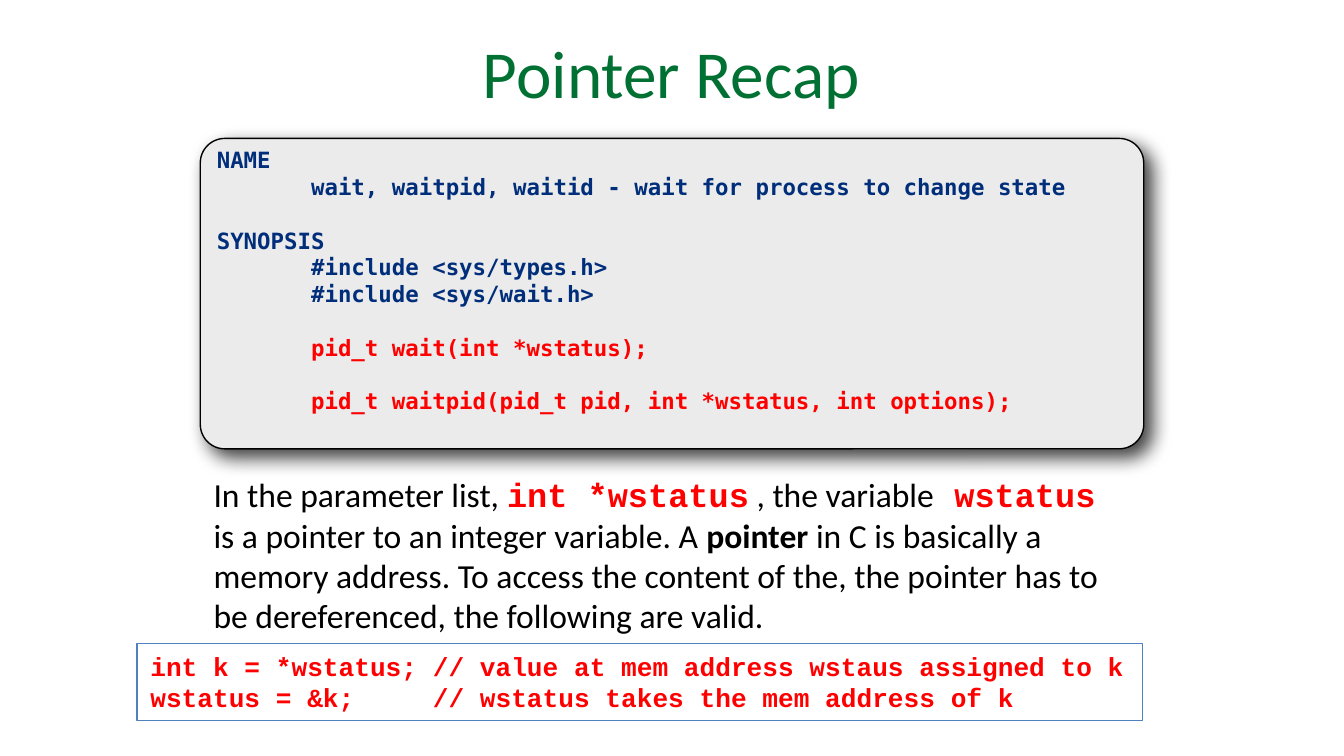
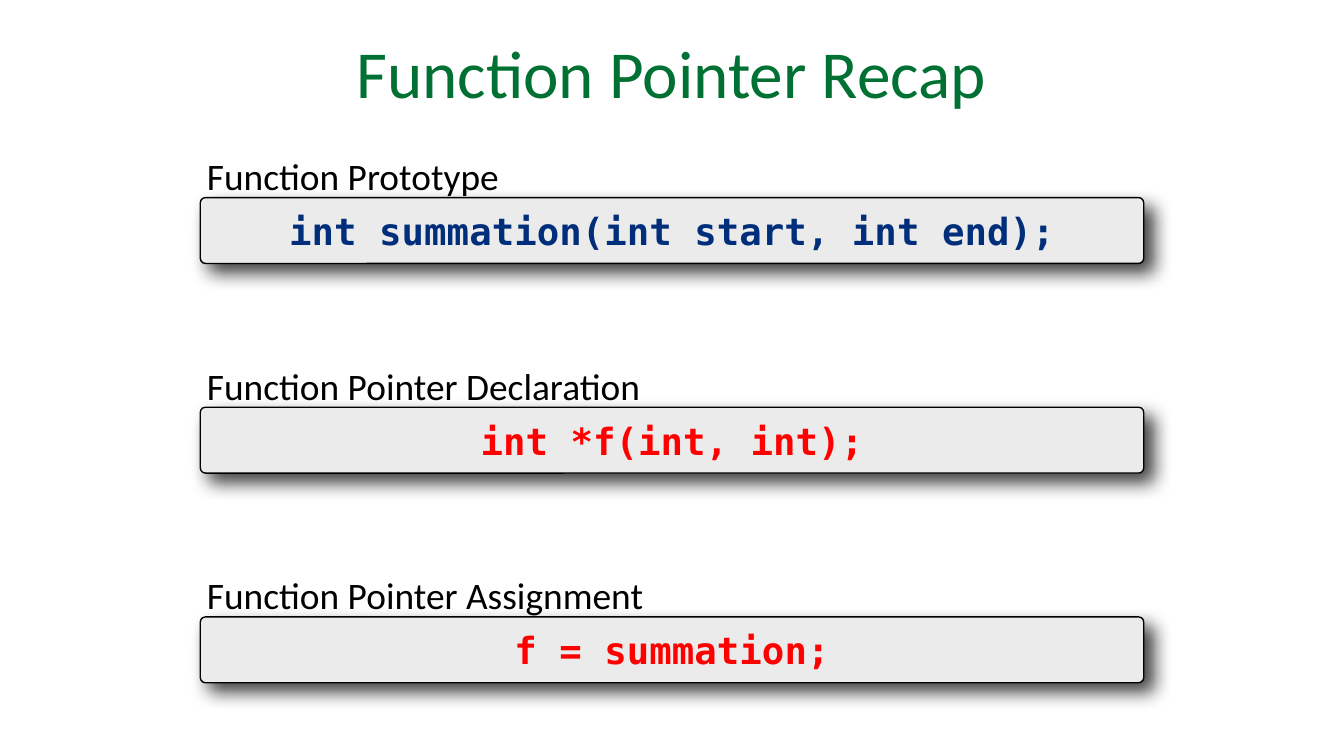
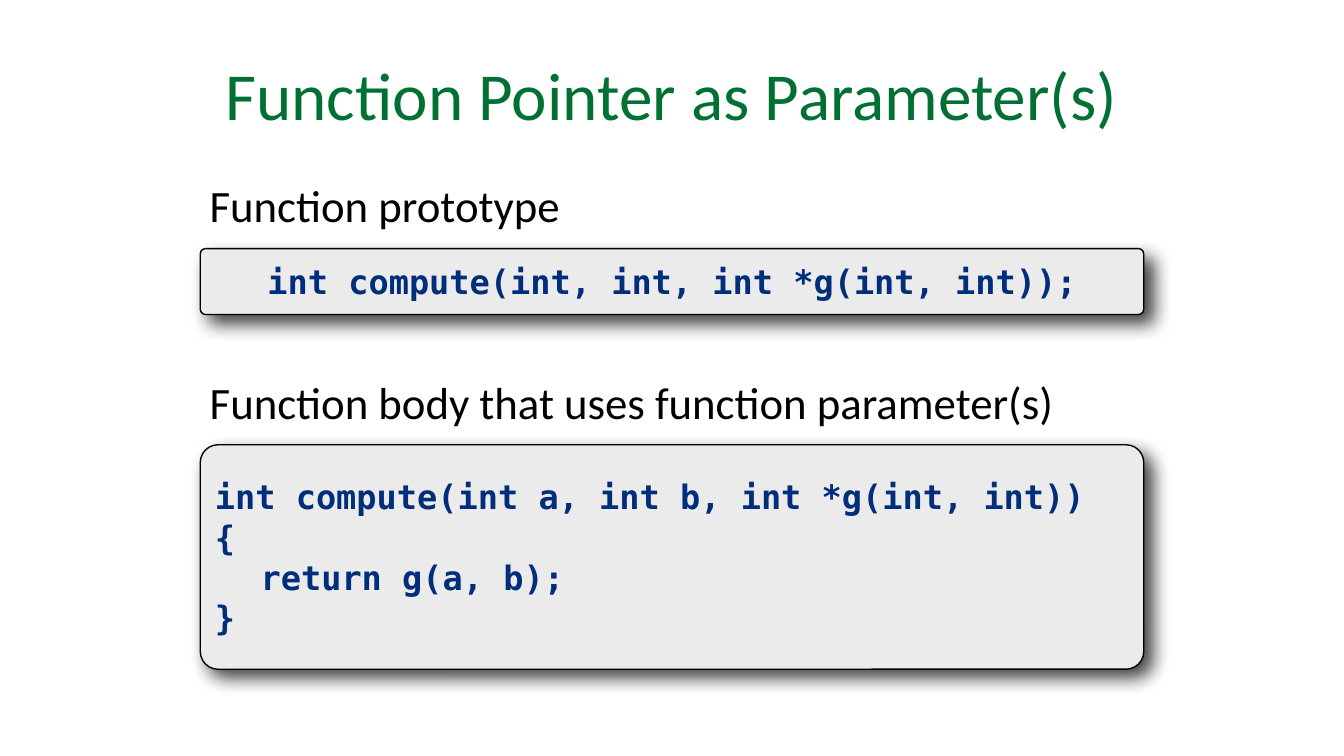
from pptx import Presentation
from pptx import util as u
from pptx.dml.color import RGBColor
from pptx.enum import shapes, text
from pptx.oxml import parse_xml

GREEN, NAVY, RED, BLACK = "007033", "002E7A", "FF0000", "000000"
PANEL_FILL, OUTLINE = "EBEBEB", "4F81BD"
BODY, MONO, COURIER = "Calibri", "DejaVu Sans Mono", "Courier New"
LEFT, WIDTH, ROW = 1.49, 7.02, 0.49
SHADOW = (
    '<a:effectLst xmlns:a="http://schemas.openxmlformats.org/drawingml/2006/main">'
    '<a:outerShdw blurRad="127000" dist="76200" dir="2700000" algn="tl" rotWithShape="0">'
    '<a:srgbClr val="000000"><a:alpha val="75000"/></a:srgbClr>'
    "</a:outerShdw></a:effectLst>"
)


def color(hex_string):
    return RGBColor.from_string(hex_string)


def write(shape, lines, size, font=BODY, ink=BLACK, bold=False, align="LEFT",
          anchor="TOP", inset=(0.1, 0.05, 0.1, 0.05), wrap=True, margin=0):
    frame = shape.text_frame
    frame.word_wrap = wrap
    frame.vertical_anchor = text.MSO_ANCHOR[anchor]
    frame.margin_left, frame.margin_top, frame.margin_right, frame.margin_bottom = map(u.Inches, inset)
    for number, line in enumerate(lines):
        paragraph = frame.paragraphs[0] if number == 0 else frame.add_paragraph()
        paragraph.alignment = text.PP_ALIGN[align]
        properties = paragraph._p.get_or_add_pPr()
        properties.set("marL", str(u.Inches(margin)))
        properties.set("indent", str(u.Inches(line.get("indent", 0))))
        if "before" in line:
            paragraph.space_before = u.Pt(line["before"])
        for words, style in line["runs"]:
            run = paragraph.add_run()
            run.text = words
            run.font.size = u.Pt(size)
            run.font.name = style.get("font", font)
            run.font.bold = style.get("bold", bold)
            run.font.color.rgb = color(style.get("ink", ink))


GAP = 14.2
MANUAL = [
    {"runs": [("NAME", {})]},
    {"runs": [("       wait, waitpid, waitid - wait for process to change state", {})]},
    {"runs": [("SYNOPSIS", {})], "before": GAP},
    {"runs": [("       #include <sys/types.h>", {})]},
    {"runs": [("       #include <sys/wait.h>", {})]},
    {"runs": [("       pid_t wait(int *wstatus);", {"ink": RED})], "before": GAP},
    {"runs": [("       pid_t waitpid(pid_t pid, int *wstatus, int options);", {"ink": RED})], "before": GAP},
]
COMPUTE_BODY = [
    {"runs": [("int compute(int a, int b, int *g(int, int))", {})]},
    {"runs": [("{", {})]},
    {"runs": [("return g(a, b);", {})], "indent": 0.34},
    {"runs": [("}", {})]},
]
RECAP_CODE = [
    ("Function Prototype", 2.86, "int summation(int start, int end);", NAVY),
    ("Function Pointer Declaration", 3.5, "int *f(int, int);", RED),
    ("Function Pointer Assignment", 3.5, "f = summation;", RED),
]

recap_panels = [
    dict(top=1.47 + 1.56 * row, height=ROW, lines=[{"runs": [(code, {"ink": ink})]}],
         size=20, align="CENTER", heading=heading, heading_size=20,
         heading_at=(1.47, 1.07 + 1.56 * row, heading_width, 0.33))
    for row, (heading, heading_width, code, ink) in enumerate(RECAP_CODE)
]
parameter_panels = [
    dict(top=1.85, height=ROW, size=18, align="CENTER",
         lines=[{"runs": [("int compute(int, int, int *g(int, int));", {})]}],
         heading="Function prototype", heading_size=24, heading_at=(LEFT, 1.25, 3.34, 0.33)),
    dict(top=3.31, height=1.67, size=18, align="LEFT", lines=COMPUTE_BODY,
         heading="Function body that uses function parameter(s)", heading_size=24,
         heading_at=(LEFT, 2.72, 7.35, 0.33)),
]
manual_panel = dict(top=1.03, height=2.31, size=12, align="LEFT", lines=MANUAL, bottom=0.24)
deck = [
    ("Pointer Recap", 0.9, [manual_panel]),
    ("Function Pointer Recap", 0.9, recap_panels),
    ("Function Pointer as Parameter(s)", 1.24, parameter_panels),
]

presentation = Presentation()
presentation.slide_width = u.Inches(10)
presentation.slide_height = u.Inches(10 * 9 / 16)

for title, title_height, panels in deck:
    slide = presentation.slides.add_slide(presentation.slide_layouts[6])
    title_box = slide.shapes.add_textbox(*map(u.Inches, (1.62, 0.08, 6.75, title_height)))
    write(title_box, [{"runs": [(title, {})]}], 36, ink=GREEN, align="CENTER",
          anchor="MIDDLE", inset=(0.04,) * 4)
    for part in panels:
        panel = slide.shapes.add_shape(shapes.MSO_SHAPE.ROUNDED_RECTANGLE,
                                       *map(u.Inches, (LEFT, part["top"], WIDTH, part["height"])))
        panel.adjustments[0] = 0.079
        panel.fill.solid()
        panel.fill.fore_color.rgb = color(PANEL_FILL)
        panel.line.color.rgb = color(BLACK)
        panel.line.width = u.Pt(0.75)
        panel._element.spPr.append(parse_xml(SHADOW))
        write(panel, part["lines"], part["size"], font=MONO, ink=NAVY, bold=True,
              align=part["align"], anchor="MIDDLE",
              margin=0.03 if part["align"] == "LEFT" else 0,
              inset=(0.04, 0.04, 0.04, part.get("bottom", 0.04)))
        if "heading" in part:
            caption = slide.shapes.add_textbox(*map(u.Inches, part["heading_at"]))
            write(caption, [{"runs": [(part["heading"], {})]}], part["heading_size"], inset=(0.07,) * 4)

pointer_slide = presentation.slides[0]
code_style = {"font": COURIER, "ink": RED, "bold": True}
explanation = pointer_slide.shapes.add_textbox(*map(u.Inches, (LEFT, 3.48, WIDTH, 1.31)))
write(explanation, [{"runs": [
    ("In the parameter list, ", {}),
    ("int *wstatus", code_style),
    (" , the variable", {}),
    (" wstatus ", code_style),
    ("is a pointer to an integer variable. A ", {}),
    ("pointer", {"bold": True}),
    (" in C is basically a memory address. To access the content of the, the pointer has to "
     "be dereferenced, the following are valid.", {}),
]}], 18)

examples = pointer_slide.shapes.add_shape(shapes.MSO_SHAPE.RECTANGLE,
                                          *map(u.Inches, (1.02, 4.79, 7.48, 0.57)))
examples.shadow.inherit = False
examples.fill.background()
examples.line.color.rgb = color(OUTLINE)
examples.line.width = u.Pt(0.75)
write(examples, [
    {"runs": [("int k = *wstatus; // value at mem address wstaus assigned to k", {})]},
    {"runs": [("wstatus = &k;     // wstatus takes the mem address of k", {})]},
], 14, font=COURIER, ink=RED, bold=True, wrap=False)

presentation.save("out.pptx")
